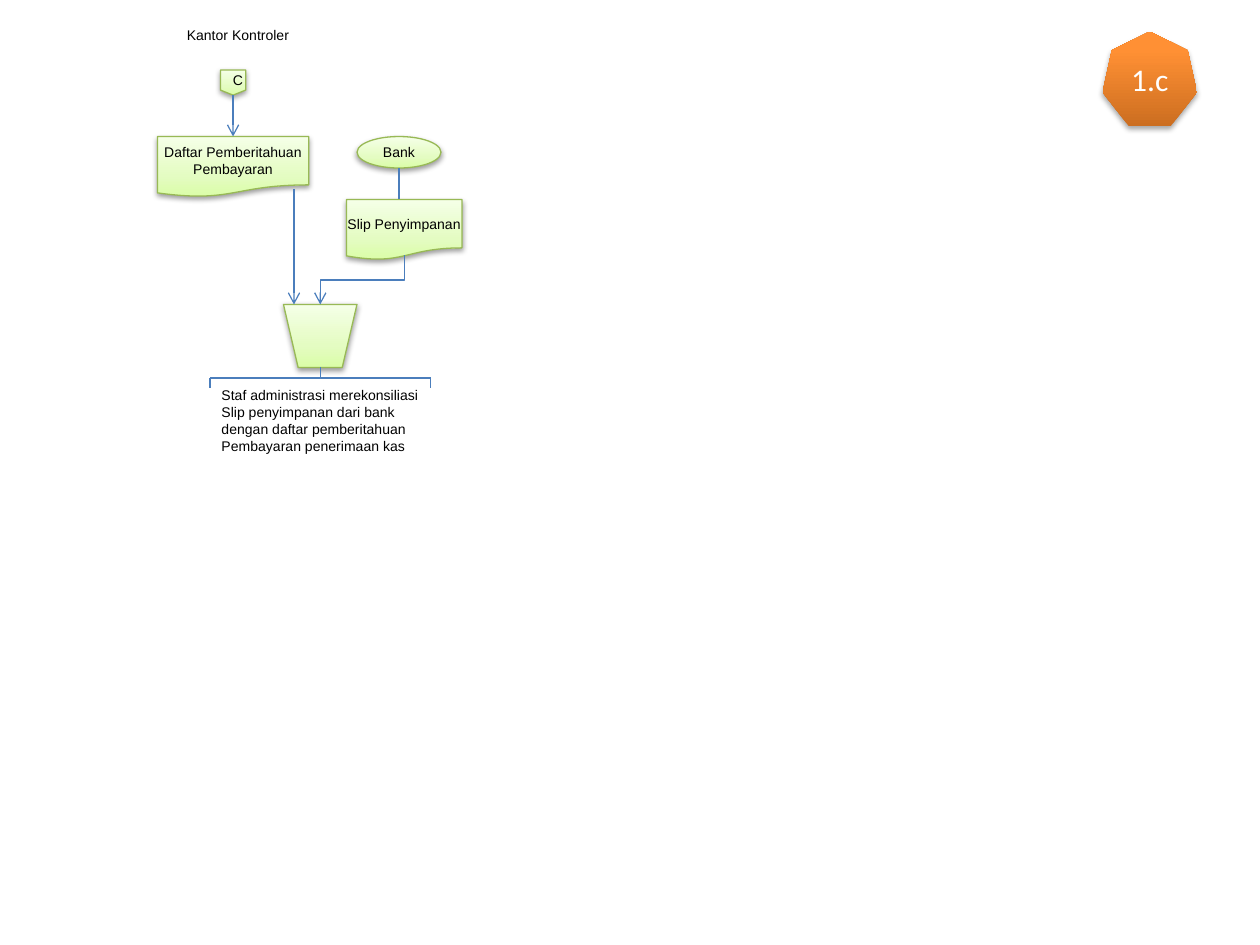
from copy import deepcopy

from lxml.etree import SubElement
from pptx import Presentation
from pptx.dml.color import RGBColor
from pptx.enum.shapes import MSO_CONNECTOR as Link, MSO_SHAPE as Preset
from pptx.enum.text import MSO_ANCHOR as Anchor, MSO_AUTO_SIZE as AutoSize, PP_ALIGN as Align
from pptx.oxml.ns import qn
from pptx.util import Pt

BLACK = RGBColor(0x00, 0x00, 0x00)
WHITE = RGBColor(0xFF, 0xFF, 0xFF)
GREEN_EDGE = RGBColor(0x98, 0xB9, 0x55)
BLUE = RGBColor(0x4B, 0x7E, 0xBC)
GREEN_BLEND = [
    (0, RGBColor(0xDA, 0xFD, 0xA7)),
    (0.35, RGBColor(0xE4, 0xFC, 0xC2)),
    (1, RGBColor(0xF5, 0xFF, 0xE7)),
]
ORANGE_BLEND = [
    (0, RGBColor(0xCC, 0x6E, 0x20)),
    (0.8, RGBColor(0xFF, 0x90, 0x34)),
    (1, RGBColor(0xFF, 0x91, 0x36)),
]


class Flowchart:
    font = "Arial"
    size = 8
    line_width = 0.75

    def __init__(self, slide):
        self.shapes = slide.shapes

    def set_text(self, frame, text, align, font=None, size=None, color=BLACK):
        frame.text = text
        for paragraph in frame.paragraphs:
            paragraph.alignment = align
            for run in paragraph.runs:
                run.font.name = font or self.font
                run.font.size = Pt(size or self.size)
                run.font.color.rgb = color

    def label(self, box, text, align=Align.LEFT, wrap=True):
        frame = self.shapes.add_textbox(*map(Pt, box)).text_frame
        self.set_text(frame, text, align)
        frame.word_wrap = wrap
        frame.auto_size = AutoSize.SHAPE_TO_FIT_TEXT

    def blend(self, shape, stops):
        shape.fill.gradient()
        shape.fill.gradient_angle = 90
        stop_list = shape._element.spPr.find(".//" + qn("a:gsLst"))
        stop_list.append(deepcopy(stop_list[0]))
        for stop, (position, color) in zip(shape.fill.gradient_stops, stops):
            stop.position = position
            stop.color.rgb = color

    def cast_shadow(self, shape, distance, opacity):
        shape.shadow.inherit = False
        effects = shape._element.spPr.find(qn("a:effectLst"))
        shadow = SubElement(
            effects, qn("a:outerShdw"), blurRad=str(Pt(3.15)), dist=str(Pt(distance)),
            dir="5400000", rotWithShape="0",
        )
        black = SubElement(shadow, qn("a:srgbClr"), val=str(BLACK))
        SubElement(black, qn("a:alpha"), val=str(opacity * 1000))

    def solid(self, preset, box, stops, distance, opacity):
        shape = self.shapes.add_shape(preset, *map(Pt, box))
        self.blend(shape, stops)
        self.cast_shadow(shape, distance, opacity)
        shape.text_frame.vertical_anchor = Anchor.MIDDLE
        return shape

    def step(self, preset, box, text="", flush=False):
        shape = self.solid(preset, box, GREEN_BLEND, 1.57, 38)
        shape.line.color.rgb = GREEN_EDGE
        shape.line.width = Pt(self.line_width)
        if flush:
            shape.text_frame.margin_left = shape.text_frame.margin_right = 0
        if text:
            self.set_text(shape.text_frame, text, Align.CENTER)

    def badge(self, box, text):
        shape = self.solid(Preset.HEPTAGON, box, ORANGE_BLEND, 1.8, 35)
        shape.line.fill.background()
        self.set_text(shape.text_frame, text, Align.CENTER, "Calibri", 18, WHITE)

    def connect(self, kind, start, end, arrow):
        link = self.shapes.add_connector(kind, *map(Pt, start + end))
        link.line.color.rgb = BLUE
        link.line.width = Pt(self.line_width)
        properties = link._element.spPr
        if arrow:
            SubElement(properties.find(qn("a:ln")), qn("a:tailEnd"), type="arrow")
        SubElement(properties, qn("a:effectLst"))
        return properties

    def straight(self, start, end, arrow=False):
        self.connect(Link.STRAIGHT, start, end, arrow)

    def elbow(self, start, end, bends, arrow=False):
        (x1, y1), (x2, y2) = start, end
        center_x, center_y = (x1 + x2) / 2, (y1 + y2) / 2
        half_width, half_height = (y2 - y1) / 2, abs(x2 - x1) / 2
        rightward = x2 > x1
        side = half_width if rightward else -half_width
        properties = self.connect(
            Link.ELBOW,
            (center_x + side, center_y - half_height),
            (center_x - side, center_y + half_height),
            arrow,
        )
        properties.find(qn("a:xfrm")).set("rot", str((270 if rightward else 90) * 60000))
        properties.find(qn("a:prstGeom")).set("prst", f"bentConnector{bends + 1}")


def main():
    deck = Presentation()
    deck.slide_width, deck.slide_height = Pt(720), Pt(540)
    chart = Flowchart(deck.slides.add_slide(deck.slide_layouts[6]))

    chart.label((82, 11.5, 108, 17), "Kantor Kontroler", Align.CENTER)
    chart.step(Preset.FLOWCHART_OFFPAGE_CONNECTOR, (126, 40, 14.4, 14.4), "C")
    chart.step(Preset.FLOWCHART_DOCUMENT, (90, 78, 86.4, 34.5),
               "Daftar Pemberitahuan Pembayaran", flush=True)
    chart.straight((133.2, 54.4), (133.2, 78), arrow=True)
    chart.step(Preset.OVAL, (204, 78, 48, 18), "Bank")
    chart.step(Preset.FLOWCHART_DOCUMENT, (198, 114, 66, 34.5), "Slip Penyimpanan", flush=True)
    chart.step(Preset.FLOWCHART_MANUAL_OPERATION, (162, 174, 42, 36))
    chart.straight((168, 108), (168, 174), arrow=True)
    chart.elbow((231, 146), (183, 174), bends=2, arrow=True)

    for bracket_x in (246, 120):
        chart.elbow((183, 210), (bracket_x, 216), bends=1)
        chart.straight((bracket_x, 216), (bracket_x, 222))

    chart.label(
        (119.5, 217.5, 128, 46),
        "Staf administrasi merekonsiliasi\n"
        "Slip penyimpanan dari bank\n"
        "dengan daftar pemberitahuan\n"
        "Pembayaran penerimaan kas",
        wrap=False,
    )
    chart.badge((630, 18, 54, 54), "1.c")
    chart.straight((228, 96), (228, 114))
    deck.save("out.pptx")


if __name__ == "__main__":
    main()
